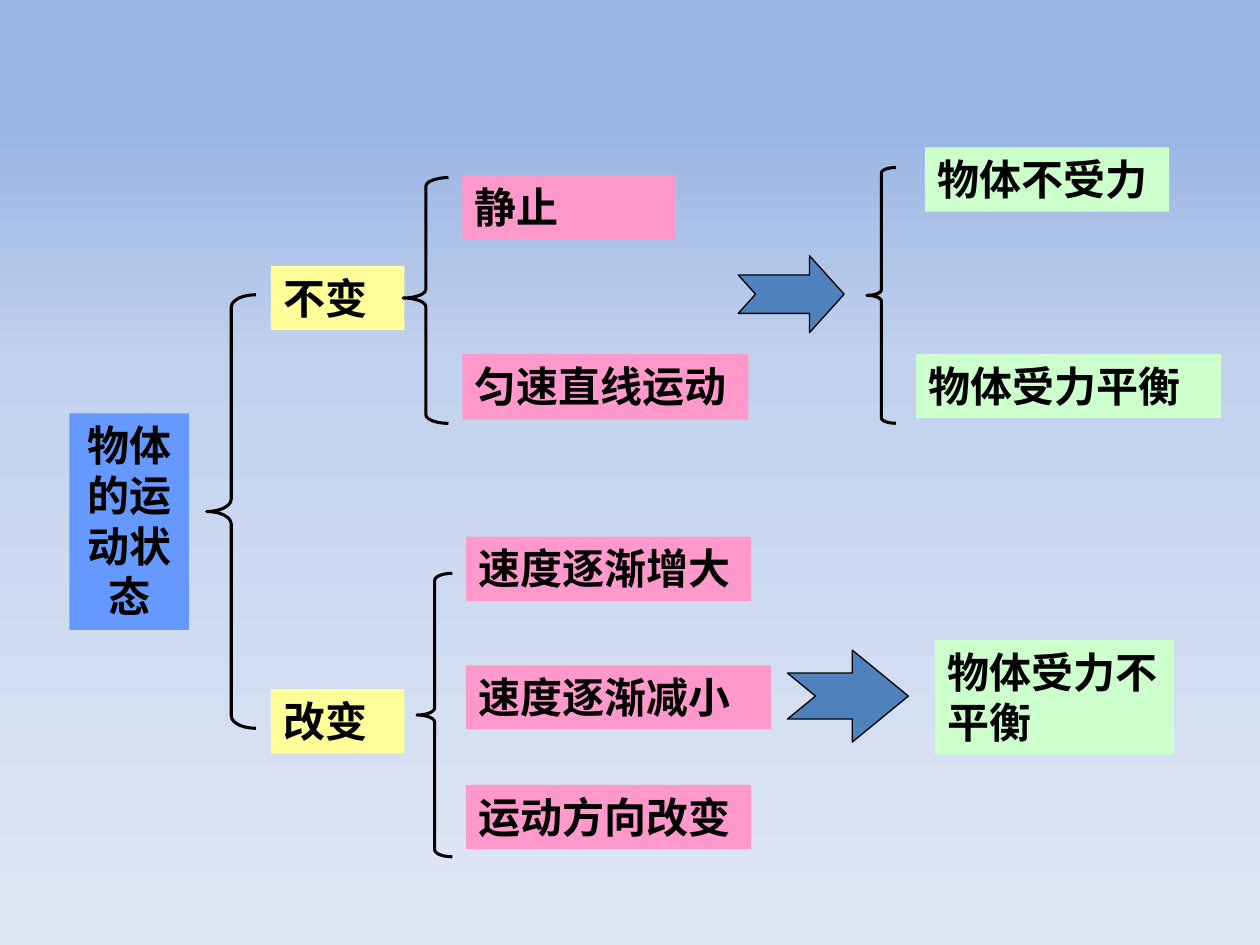
import copy

import pptx
import pptx.dml.color
import pptx.enum.shapes
import pptx.enum.text
import pptx.oxml.ns
import pptx.util
from pptx.util import Inches

SHAPES = pptx.enum.shapes.MSO_SHAPE
ALIGN = pptx.enum.text.PP_ALIGN

BLACK = "000000"
BLUE = "6699FF"
YELLOW = "FFFF99"
PINK = "FF99CC"
GREEN = "CCFFCC"
ARROW_BLUE = "4F81BD"

# text, fill, left, top, width, height
LABELS = [
    ("不变", YELLOW, 2.15, 2.11, 1.06, 0.51),
    ("改变", YELLOW, 2.15, 5.47, 1.06, 0.51),
    ("静止", PINK, 3.67, 1.39, 1.69, 0.51),
    ("匀速直线运动", PINK, 3.67, 2.81, 2.27, 0.52),
    ("速度逐渐增大", PINK, 3.7, 4.26, 2.26, 0.51),
    ("速度逐渐减小", PINK, 3.7, 5.28, 2.42, 0.51),
    ("运动方向改变", PINK, 3.7, 6.23, 2.26, 0.51),
    ("物体不受力", GREEN, 7.34, 1.17, 1.94, 0.51),
    ("物体受力平衡", GREEN, 7.27, 2.81, 2.42, 0.51),
    ("物体受力不平衡", GREEN, 7.42, 5.08, 1.9, 0.91),
]

# left, top, width, height, curl, position of the point
BRACES = [
    (1.64, 2.34, 0.39, 3.44, 0.25, 0.5),
    (3.2, 1.41, 0.36, 1.95, 0.19, 0.49),
    (3.31, 4.55, 0.28, 2.25, 0.2, 0.5),
    (6.88, 1.33, 0.23, 2.03, 0.19, 0.5),
]

# left, top, width, height, head length
ARROWS = [
    (5.86, 2.03, 0.84, 0.61, 0.45),
    (6.25, 5.16, 0.96, 0.73, 0.61),
]


def rgb(color):
    return pptx.dml.color.RGBColor.from_string(color)


def paint_background(slide, stops):
    """Fill the background from top to bottom with (position, colour) stops."""
    fill = slide.background.fill
    fill.gradient()
    fill.gradient_angle = 270
    stop_list = slide.element.find(".//" + pptx.oxml.ns.qn("a:gsLst"))
    while len(stop_list) < len(stops):
        stop_list.append(copy.deepcopy(stop_list[-1]))
    for stop, (position, color) in zip(fill.gradient_stops, stops):
        stop.position = position
        stop.color.rgb = rgb(color)


def add_label(slide, text, color, left, top, width, height, align=ALIGN.LEFT):
    label = slide.shapes.add_textbox(
        Inches(left), Inches(top), Inches(width), Inches(height))
    label.fill.solid()
    label.fill.fore_color.rgb = rgb(color)
    frame = label.text_frame
    frame.word_wrap = True
    frame.auto_size = pptx.enum.text.MSO_AUTO_SIZE.SHAPE_TO_FIT_TEXT
    frame.text = text
    paragraph = frame.paragraphs[0]
    paragraph.alignment = align
    paragraph.font.name = "Arial"
    paragraph.font.size = pptx.util.Pt(24)
    paragraph.font.bold = True
    paragraph.font.color.rgb = rgb(BLACK)


def add_outlined(slide, kind, left, top, width, height, adjustments, line_width):
    shape = slide.shapes.add_shape(
        kind, Inches(left), Inches(top), Inches(width), Inches(height))
    shape.shadow.inherit = False
    for index, value in enumerate(adjustments):
        shape.adjustments[index] = value
    shape.line.color.rgb = rgb(BLACK)
    shape.line.width = pptx.util.Pt(line_width)
    return shape


def add_brace(slide, left, top, width, height, curl, point):
    brace = add_outlined(slide, SHAPES.LEFT_BRACE, left, top, width, height,
                         (curl, point), 1.75)
    brace.fill.background()


def add_arrow(slide, left, top, width, height, head):
    arrow = add_outlined(slide, SHAPES.NOTCHED_RIGHT_ARROW, left, top, width,
                         height, (0.5, head), 0.75)
    arrow.fill.solid()
    arrow.fill.fore_color.rgb = rgb(ARROW_BLUE)


def main():
    presentation = pptx.Presentation()
    presentation.slide_width = Inches(10)
    presentation.slide_height = Inches(7.5)
    slide = presentation.slides.add_slide(presentation.slide_layouts[6])

    paint_background(slide, [(0.13, "9AB5E4"), (0.39, "C2D1ED"), (1, "E1E8F5")])
    add_label(slide, "物体的运动状态", BLUE, 0.55, 3.28, 0.95, 1.72, ALIGN.CENTER)
    for label in LABELS:
        add_label(slide, *label)
    for brace in BRACES:
        add_brace(slide, *brace)
    for arrow in ARROWS:
        add_arrow(slide, *arrow)

    presentation.save("out.pptx")


if __name__ == "__main__":
    main()
